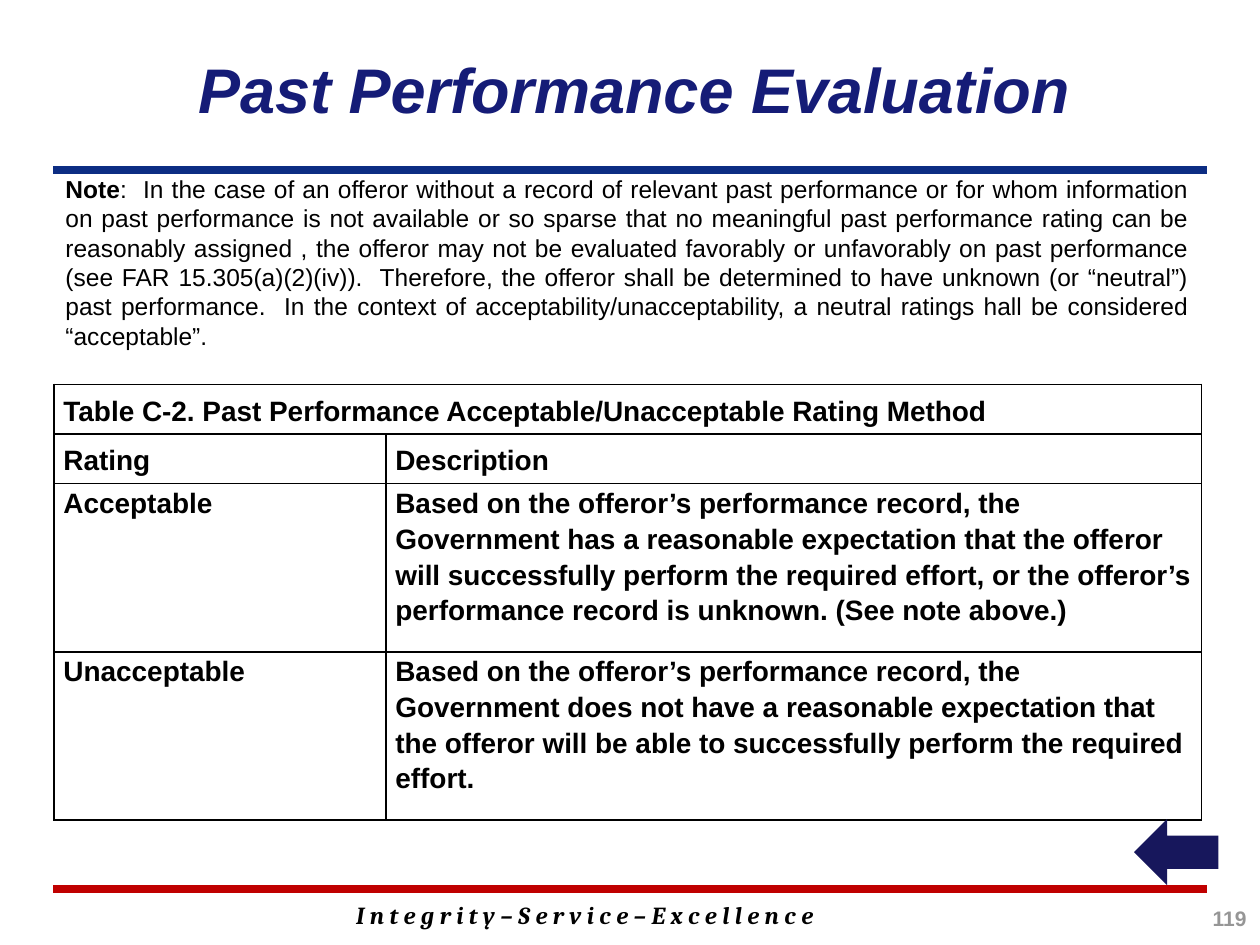
from pptx import Presentation
from pptx.dml.color import RGBColor
from pptx.enum import shapes, text
from pptx.oxml import parse_xml
from pptx.oxml.ns import nsdecls
from pptx.util import Cm, Pt

NAVY = RGBColor(0x15, 0x1C, 0x77)
RULE_BLUE = RGBColor(0x0C, 0x2D, 0x83)
RULE_RED = RGBColor(0xC0, 0x00, 0x00)
ARROW_NAVY = RGBColor(0x17, 0x17, 0x5C)
GRAY = RGBColor(0x96, 0x96, 0x96)
BLACK = RGBColor(0, 0, 0)
LEFT, RIGHT = 1.07, 24.33

TITLE = "Past Performance Evaluation"
NOTE = [
    ("Note", True),
    (":  In the case of an offeror without a record of relevant past performance or for whom "
     "information on past performance is not available or so sparse that no meaningful past "
     "performance rating can be reasonably assigned , the offeror may not be evaluated favorably "
     "or unfavorably on past performance (see FAR 15.305(a)(2)(iv)).  Therefore, the offeror shall "
     "be determined to have unknown (or “neutral”) past performance.  In the context of "
     "acceptability/unacceptability, a neutral ratings hall be considered “acceptable”.", False),
]
RATINGS = [
    ("Table C-2. Past Performance Acceptable/Unacceptable Rating Method", ""),
    ("Rating", "Description"),
    ("Acceptable",
     "Based on the offeror’s performance record, the Government has a reasonable expectation that "
     "the offeror will successfully perform the required effort, or the offeror’s performance "
     "record is unknown. (See note above.)"),
    ("Unacceptable",
     "Based on the offeror’s performance record, the Government does not have a reasonable "
     "expectation that the offeror will be able to successfully perform the required effort."),
]
COLUMN_WIDTHS = [6.69, 16.44]
ROW_HEIGHTS = [1.0, 1.0, 3.39, 3.39]
HEADING_ROWS = 2
MOTTO = "I n t e g r i t y – S e r v i c e – E x c e l l e n c e"
PAGE = "119"


def style(run, size, color=BLACK, bold=True, italic=False, face="Arial"):
    font = run.font
    font.name, font.size, font.bold, font.italic = face, Pt(size), bold, italic
    font.color.rgb = color


def add_text(slide, box, runs, size, align=text.PP_ALIGN.LEFT,
             anchor=text.MSO_ANCHOR.TOP, **look):
    frame = slide.shapes.add_textbox(*map(Cm, box)).text_frame
    frame.word_wrap = True
    frame.vertical_anchor = anchor
    paragraph = frame.paragraphs[0]
    paragraph.alignment = align
    for words, bold in runs:
        run = paragraph.add_run()
        run.text = words
        style(run, size, bold=bold, **look)


def add_rule(slide, y, color):
    rule = slide.shapes.add_connector(
        shapes.MSO_CONNECTOR.STRAIGHT, Cm(LEFT), Cm(y), Cm(RIGHT), Cm(y))
    rule.line.color.rgb = color
    rule.line.width = Pt(4.5)
    rule._element.spPr.append(parse_xml(f"<a:effectLst {nsdecls('a')}/>"))


def add_borders(cell):
    properties = cell._tc.get_or_add_tcPr()
    for position, side in enumerate(("lnL", "lnR", "lnT", "lnB")):
        properties.insert(position, parse_xml(
            f'<a:{side} {nsdecls("a")} w="12700"><a:solidFill>'
            f'<a:srgbClr val="{BLACK}"/></a:solidFill></a:{side}>'))


def add_ratings(slide):
    table = slide.shapes.add_table(
        len(RATINGS), len(COLUMN_WIDTHS), Cm(1.09), Cm(7.75),
        Cm(sum(COLUMN_WIDTHS)), Cm(sum(ROW_HEIGHTS))).table
    table.first_row = table.horz_banding = False
    for column, width in zip(table.columns, COLUMN_WIDTHS):
        column.width = Cm(width)
    for r, (entries, height) in enumerate(zip(RATINGS, ROW_HEIGHTS)):
        table.rows[r].height = Cm(height)
        for c, entry in enumerate(entries):
            cell = table.cell(r, c)
            cell.fill.background()
            cell.margin_left = cell.margin_right = Cm(0.19)
            cell.margin_top = cell.margin_bottom = 0
            cell.vertical_anchor = (text.MSO_ANCHOR.MIDDLE if r < HEADING_ROWS
                                    else text.MSO_ANCHOR.TOP)
            cell.text_frame.text = entry
            paragraph = cell.text_frame.paragraphs[0]
            paragraph.line_spacing = 1.15
            for run in paragraph.runs:
                style(run, 16)
            add_borders(cell)
    table.cell(0, 0).merge(table.cell(0, 1))


def add_back_arrow(slide):
    arrow = slide.shapes.add_shape(
        shapes.MSO_SHAPE.RIGHT_ARROW, Cm(22.86), Cm(16.51), Cm(1.7), Cm(1.34))
    arrow.rotation = 180
    arrow.shadow.inherit = False
    arrow.fill.solid()
    arrow.fill.fore_color.rgb = ARROW_NAVY
    arrow.line.fill.background()


def main():
    deck = Presentation()
    deck.slide_width, deck.slide_height = Cm(25.4), Cm(19.05)
    slide = deck.slides.add_slide(deck.slide_layouts[6])
    add_rule(slide, 17.93, RULE_RED)
    add_rule(slide, 3.43, RULE_BLUE)
    add_text(slide, (2.97, 0.2, 18.85, 3.18), [(TITLE, True)], 36, text.PP_ALIGN.RIGHT,
             text.MSO_ANCHOR.MIDDLE, color=NAVY, italic=True)
    add_ratings(slide)
    add_text(slide, (LEFT, 3.38, 23.16, 3.84), NOTE, 14, text.PP_ALIGN.JUSTIFY)
    add_back_arrow(slide)
    add_text(slide, (22.2, 18.14, 3.18, 0.84), [(PAGE, True)], 12, text.PP_ALIGN.RIGHT,
             color=GRAY)
    add_text(slide, (6.93, 18.01, 16.71, 0.86), [(MOTTO, True)], 14,
             italic=True, face="Cambria")
    deck.save("out.pptx")


if __name__ == "__main__":
    main()
